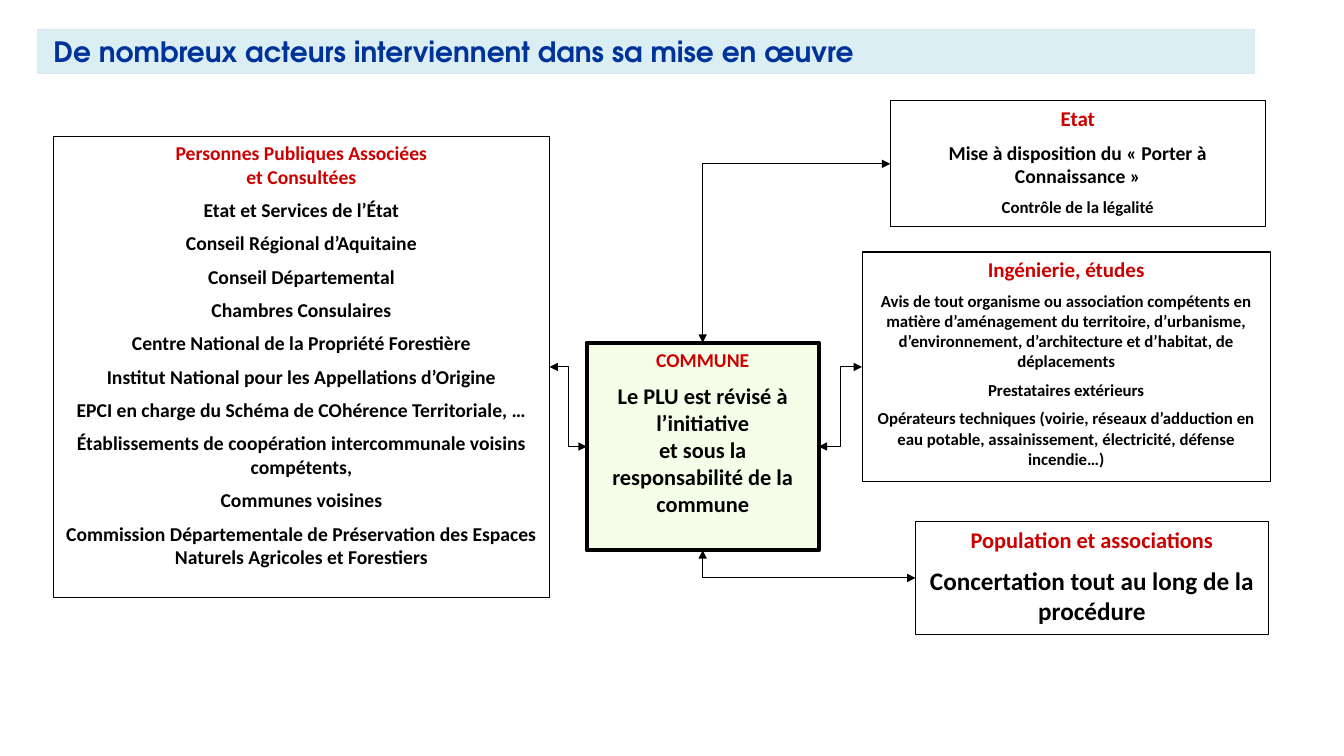
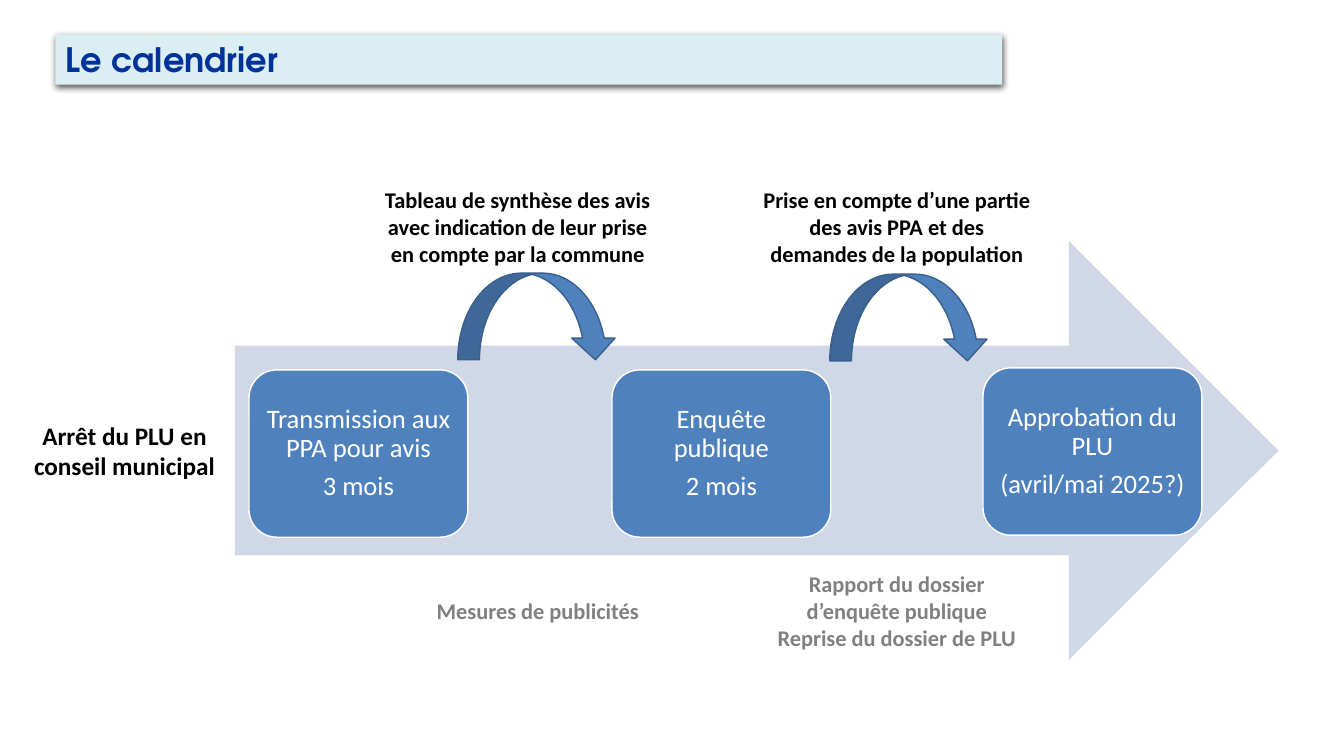
from dataclasses import dataclass

from lxml import etree
from pptx import Presentation
from pptx.dml.color import RGBColor
from pptx.enum import shapes, text
from pptx.oxml import ns
from pptx.util import Inches, Pt


# Theme: every colour, font and type size
@dataclass(frozen=True)
class Theme:
    body_font: str = "Calibri"
    title_font: str = "TeX Gyre Adventor"
    navy: str = "003399"
    band: str = "DBEEF4"
    band_edge: str = "DCE6F2"
    red: str = "CC0000"
    black: str = "000000"
    white: str = "FFFFFF"
    grey: str = "808080"
    green: str = "CCFF99"
    blue: str = "4F81BD"
    blue_edge: str = "3A5F8C"
    pale_blue: str = "D0D8E8"
    small: int = 12
    normal: int = 14
    heading: int = 15
    medium: int = 16
    large: int = 18
    step: int = 19
    title: int = 20
    big_title: int = 24


THEME = Theme()


@dataclass
class Line:
    """One paragraph; gap is the space before it, as a share of its size."""
    words: str
    size: int = THEME.normal
    colour: str = THEME.black
    bold: bool = True
    gap: float = 0.5
    spacing: float = 1.0


def add_element(parent, tag, **attributes):
    return etree.SubElement(parent, ns.qn(tag), attributes)


class Deck:
    def __init__(self, theme):
        self.theme = theme
        self.presentation = Presentation()
        self.presentation.slide_width = Inches(13.33)
        self.presentation.slide_height = Inches(7.5)
        self.slide = None

    def new_slide(self):
        self.slide = self.presentation.slides.add_slide(
            self.presentation.slide_layouts[5])

    def paint(self, shape, fill=None, edge=None, width=0.75):
        if fill:
            shape.fill.solid()
            shape.fill.fore_color.rgb = RGBColor.from_string(fill)
        else:
            shape.fill.background()
        if edge:
            shape.line.color.rgb = RGBColor.from_string(edge)
            shape.line.width = Pt(width)
        else:
            shape.line.fill.background()

    def set_text(self, shape, lines, font=None, align=text.PP_ALIGN.CENTER,
                 anchor=text.MSO_ANCHOR.TOP, side=0.1, edge=0.05):
        frame = shape.text_frame
        frame.word_wrap = True
        frame.auto_size = text.MSO_AUTO_SIZE.NONE
        frame.vertical_anchor = anchor
        frame.margin_left = frame.margin_right = Inches(side)
        frame.margin_top = frame.margin_bottom = Inches(edge)
        for index, line in enumerate(lines):
            paragraph = frame.add_paragraph() if index else frame.paragraphs[0]
            paragraph.alignment = align
            paragraph.line_spacing = line.spacing
            paragraph.space_before = Pt(line.size * line.gap if index else 0)
            run = paragraph.add_run()
            run.text = line.words
            run.font.name = font or self.theme.body_font
            run.font.size = Pt(line.size)
            run.font.bold = line.bold
            run.font.color.rgb = RGBColor.from_string(line.colour)

    def title(self, words, box, size, side=0.1, edge=None, shadow=False):
        shape = self.slide.shapes.title
        shape.left, shape.top, shape.width, shape.height = map(Inches, box)
        self.paint(shape, self.theme.band, edge, 0.5)
        self.set_text(shape, [Line(words, size, self.theme.navy)],
                      self.theme.title_font, text.PP_ALIGN.LEFT,
                      text.MSO_ANCHOR.MIDDLE, side, 0)
        if shadow:
            effects = add_element(shape._element.spPr, "a:effectLst")
            outer = add_element(effects, "a:outerShdw", blurRad=str(Pt(4.5)),
                                dist=str(Pt(1.5)), dir="5400000", rotWithShape="0")
            colour = add_element(outer, "a:srgbClr", val=self.theme.black)
            add_element(colour, "a:alpha", val="63000")

    def shape(self, kind, box, fill=None, edge=None, width=0.75):
        shape = self.slide.shapes.add_shape(kind, *map(Inches, box))
        shape.shadow.inherit = False
        self.paint(shape, fill, edge, width)
        return shape

    def panel(self, box, lines, fill=None, width=0.75, opacity=None):
        shape = self.shape(shapes.MSO_SHAPE.RECTANGLE, box, fill,
                           self.theme.black, width)
        if opacity is not None:
            colour = shape._element.spPr.find(
                ns.qn("a:solidFill")).find(ns.qn("a:srgbClr"))
            add_element(colour, "a:alpha", val=str(opacity * 1000))
        self.set_text(shape, lines)
        return shape

    def step(self, left, top, *words):
        shape = self.shape(shapes.MSO_SHAPE.ROUNDED_RECTANGLE,
                           (left, top, 2.17, 1.66), self.theme.blue,
                           self.theme.white, 1)
        lines = [Line(item, self.theme.step, self.theme.white, False, 0.35, 0.9)
                 for item in words]
        self.set_text(shape, lines, anchor=text.MSO_ANCHOR.MIDDLE,
                      side=0.08, edge=0.08)

    def label(self, box, lines):
        self.set_text(self.slide.shapes.add_textbox(*map(Inches, box)), lines)

    def link(self, start, start_site, end, end_site, corner=False):
        """Two-headed elbow between two shapes, with one bend if corner."""
        connector = self.slide.shapes.add_connector(
            shapes.MSO_CONNECTOR.ELBOW, 0, 0, 0, 0)
        connector.begin_connect(start, start_site)
        connector.end_connect(end, end_site)
        connector.line.color.rgb = RGBColor.from_string(self.theme.black)
        connector.line.width = Pt(0.75)
        properties = connector._element.spPr
        if corner:
            properties.find(ns.qn("a:prstGeom")).set("prst", "bentConnector2")
        outline = properties.find(ns.qn("a:ln"))
        for arrowhead in ("a:headEnd", "a:tailEnd"):
            add_element(outline, arrowhead, type="triangle")
        add_element(properties, "a:effectLst")


TOP, LEFT, BOTTOM, RIGHT = range(4)  # connection sites of a rectangle


def build_actors(deck):
    theme = deck.theme
    deck.new_slide()
    deck.title("De nombreux acteurs interviennent dans sa mise en œuvre",
               (0.37, 0.29, 12.07, 0.44), theme.title, 0.16, theme.band_edge)

    # Panels
    commune = deck.panel((5.82, 3.4, 2.3, 2.06), [
        Line("COMMUNE", colour=theme.red),
        Line("Le PLU est révisé à l’initiative", theme.medium),
        Line("et sous la responsabilité de la commune", theme.medium, gap=0),
    ], theme.green, 3, 20)
    state = deck.panel((8.83, 1, 3.72, 1.25), [
        Line("Etat", theme.heading, theme.red),
        Line("Mise à disposition du « Porter à Connaissance »"),
        Line("Contrôle de la légalité", theme.small),
    ])
    engineering = deck.panel((8.55, 2.5, 4.05, 2.28), [
        Line("Ingénierie, études", theme.heading, theme.red),
        Line("Avis de tout organisme ou association compétents en matière "
             "d’aménagement du territoire, d’urbanisme, d’environnement, "
             "d’architecture et d’habitat, de déplacements", theme.small),
        Line("Prestataires extérieurs", theme.small),
        Line("Opérateurs techniques (voirie, réseaux d’adduction en eau potable, "
             "assainissement, électricité, défense incendie…)", theme.small),
    ])
    bodies = (
        "Etat et Services de l’État",
        "Conseil Régional d’Aquitaine",
        "Conseil Départemental",
        "Chambres Consulaires",
        "Centre National de la Propriété Forestière",
        "Institut National pour les Appellations d’Origine",
        "EPCI en charge du Schéma de COhérence Territoriale, …",
        "Établissements de coopération intercommunale voisins compétents,",
        "Communes voisines",
        "Commission Départementale de Préservation des Espaces Naturels "
        "Agricoles et Forestiers",
    )
    public_bodies = deck.panel((0.53, 1.35, 4.92, 4.58), [
        Line("Personnes Publiques Associées", colour=theme.red),
        Line("et Consultées", colour=theme.red, gap=0),
        *map(Line, bodies),
    ])
    population = deck.panel((9.08, 5.17, 3.5, 1.13), [
        Line("Population et associations", theme.medium, theme.red),
        Line("Concertation tout au long de la procédure", theme.large),
    ])

    # Links to the commune
    deck.link(public_bodies, RIGHT, commune, LEFT)
    deck.link(commune, RIGHT, engineering, LEFT)
    deck.link(state, LEFT, commune, TOP, corner=True)
    deck.link(population, LEFT, commune, BOTTOM, corner=True)


def build_calendar(deck):
    theme = deck.theme
    deck.new_slide()
    deck.title("Le calendrier", (0.55, 0.34, 9.39, 0.5), theme.big_title,
               shadow=True)

    # Timeline and its steps
    deck.shape(shapes.MSO_SHAPE.RIGHT_ARROW, (2.33, 2.39, 10.35, 4.16),
               theme.pale_blue)
    deck.step(2.47, 3.67, "Transmission aux PPA pour avis", "3 mois")
    deck.step(6.07, 3.67, "Enquête publique", "2 mois")
    deck.step(9.75, 3.65, "Approbation du PLU", "(avril/mai 2025?)")

    # Labels around the timeline
    deck.label((0, 4.12, 2.47, 0.71),
               [Line("Arrêt du PLU en conseil municipal", theme.large)])
    notes = (
        (3.71, 1.8, 0.91, theme.black,
         ["Tableau de synthèse des avis avec indication de leur prise en compte "
          "par la commune"]),
        (7.47, 1.8, 0.91, theme.black,
         ["Prise en compte d’une partie des avis PPA et des demandes de la "
          "population"]),
        (3.91, 5.88, 0.37, theme.grey, ["Mesures de publicités"]),
        (7.47, 5.61, 0.91, theme.grey,
         ["Rapport du dossier d’enquête publique", "Reprise du dossier de PLU"]),
    )
    for left, top, height, colour, words in notes:
        deck.label((left, top, 2.85, height),
                   [Line(item, theme.medium, colour, gap=0) for item in words])

    # Curved arrows from step to step
    for left, top in ((4.54, 2.71), (8.23, 2.72)):
        deck.shape(shapes.MSO_SHAPE.CURVED_DOWN_ARROW, (left, top, 1.58, 0.86),
                   theme.blue, theme.blue_edge, 1)


def main():
    deck = Deck(THEME)
    build_actors(deck)
    build_calendar(deck)
    deck.presentation.save("out.pptx")


if __name__ == "__main__":
    main()
